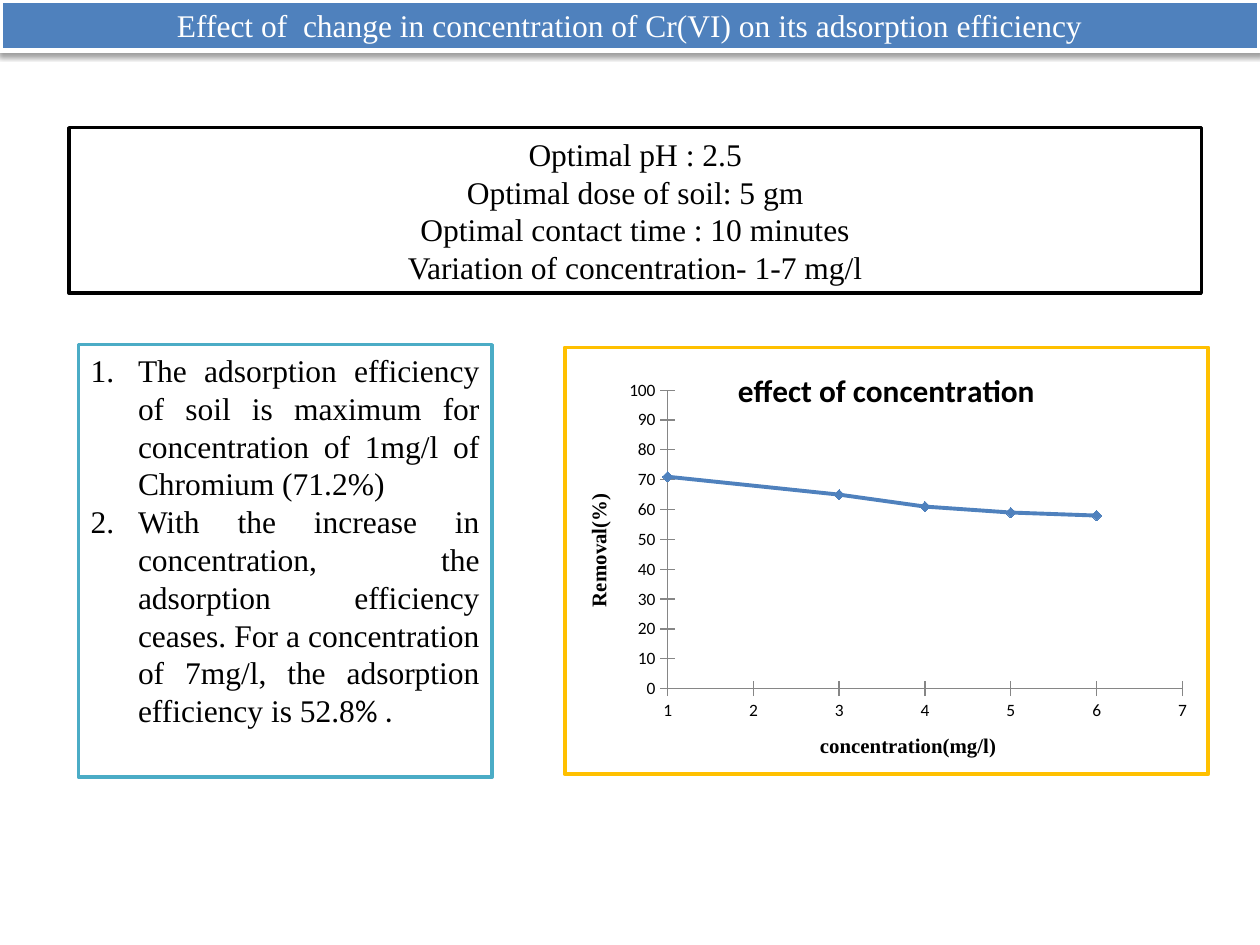
from lxml.etree import fromstring
from pptx import Presentation
from pptx.chart.data import XyChartData
from pptx.dml.color import RGBColor
from pptx.enum.chart import XL_CHART_TYPE, XL_MARKER_STYLE, XL_TICK_MARK
from pptx.enum.shapes import MSO_SHAPE
from pptx.enum.text import MSO_ANCHOR, PP_ALIGN
from pptx.util import Pt

COLORS = {"blue": "4F81BD", "white": "FFFFFF", "black": "000000",
          "teal": "4BACC6", "gold": "FFC000", "gray": "868686"}
SERIF, SANS = "Times New Roman", "Calibri"
NS = ('xmlns:a="http://schemas.openxmlformats.org/drawingml/2006/main" '
      'xmlns:c="http://schemas.openxmlformats.org/drawingml/2006/chart"')


def tint(name):
    return RGBColor.from_string(COLORS[name])


def apply(item, values):
    for key, value in values.items():
        setattr(item, key, value)


def style(font, color="black", **values):
    apply(font, values)
    font.color.rgb = tint(color)


def stroke(line, color, width):
    line.color.rgb = tint(color)
    line.width = Pt(width)


def add_box(slide, place, fill, edge, width, anchor=MSO_ANCHOR.MIDDLE):
    box = slide.shapes.add_shape(MSO_SHAPE.RECTANGLE, *map(Pt, place))
    box.shadow.inherit = False
    box.fill.solid()
    box.fill.fore_color.rgb = tint(fill)
    stroke(box.line, edge, width)
    apply(box.text_frame, {"word_wrap": True, "vertical_anchor": anchor})
    return box


def add_text(box, lines, align, color="black"):
    frame = box.text_frame
    for i, runs in enumerate(lines):
        para = frame.add_paragraph() if i else frame.paragraphs[0]
        para.alignment = align
        for text, face in runs:
            run = para.add_run()
            run.text = text
            style(run.font, color, name=face, size=Pt(18))


def add_shade(box):
    box._element.spPr.find("{*}effectLst").append(fromstring(
        f'<a:outerShdw {NS} blurRad="{Pt(3.1)}" dist="{Pt(1.6)}" dir="5400000" '
        f'rotWithShape="0"><a:srgbClr val="{COLORS["black"]}">'
        '<a:alpha val="38000"/></a:srgbClr></a:outerShdw>'))


def add_count(box):
    for para in box.text_frame.paragraphs:
        props = para._p.get_or_add_pPr()
        for key, value in {"marL": Pt(27), "indent": -Pt(27)}.items():
            props.set(key, str(value))
        props.append(fromstring(f'<a:buFont {NS} typeface="+mj-lt"/>'))
        props.append(fromstring(f'<a:buAutoNum {NS} type="arabicPeriod"/>'))


def set_title(owner, text, face, size):
    frame = (owner.chart_title if hasattr(owner, "chart_title")
             else owner.axis_title).text_frame
    frame.text = text
    style(frame.paragraphs[0].runs[0].font, name=face, size=Pt(size), bold=True)


def set_axis(axis, title, low, high, step):
    apply(axis, {"minimum_scale": low, "maximum_scale": high, "major_unit": step,
                 "has_major_gridlines": False,
                 "major_tick_mark": XL_TICK_MARK.CROSS,
                 "minor_tick_mark": XL_TICK_MARK.NONE})
    stroke(axis.format.line, "gray", 0.75)
    axis.tick_labels.number_format = "General"
    axis.tick_labels.number_format_is_linked = False
    set_title(axis, title, SERIF, 12)


def set_frame(chart):
    root = chart._chartSpace
    root.find("{*}chart").addnext(fromstring(
        f'<c:spPr {NS}><a:solidFill><a:srgbClr val="{COLORS["white"]}"/></a:solidFill>'
        f'<a:ln w="{Pt(2.25)}"><a:solidFill><a:srgbClr val="{COLORS["gold"]}"/>'
        '</a:solidFill></a:ln></c:spPr>'))
    plot = root.find(".//{*}plotArea")
    old = plot.find("{*}layout")
    if old is not None:
        plot.remove(old)
    sizes = {"x": 0.16, "y": 0.1, "w": 0.8, "h": 0.7}
    modes = "".join(f'<c:{key}Mode val="edge"/>' for key in "xy")
    parts = "".join(f'<c:{key} val="{value}"/>' for key, value in sizes.items())
    plot.insert(0, fromstring(
        f'<c:layout {NS}><c:manualLayout><c:layoutTarget val="inner"/>'
        f'{modes}{parts}</c:manualLayout></c:layout>'))


def add_graph(slide, place, points):
    data = XyChartData()
    rows = data.add_series("Series 1")
    for x, y in points:
        rows.add_data_point(x, y)
    chart = slide.shapes.add_chart(
        XL_CHART_TYPE.XY_SCATTER_LINES, *map(Pt, place), data).chart
    style(chart.font, name=SANS, size=Pt(10))
    chart.has_legend = False
    set_title(chart, "effect of concentration", SANS, 18)
    chart.chart_title.include_in_layout = True
    set_axis(chart.category_axis, "concentration(mg/l)", 1, 7, 1)
    set_axis(chart.value_axis, "Removal(%)", 0, 100, 10)
    plot = chart.plots[0]
    plot.vary_by_categories = False
    line = plot.series[0]
    line.smooth = False
    stroke(line.format.line, "blue", 2.25)
    apply(line.marker, {"style": XL_MARKER_STYLE.DIAMOND, "size": 6})
    line.marker.format.fill.solid()
    line.marker.format.fill.fore_color.rgb = tint("blue")
    stroke(line.marker.format.line, "blue", 0.75)
    set_frame(chart)


def main():
    deck = Presentation()
    apply(deck, {"slide_width": Pt(720), "slide_height": Pt(540)})
    slide = deck.slides.add_slide(deck.slide_layouts[6])

    head = add_box(slide, (0, 0, 720, 29), "blue", "white", 3)
    add_shade(head)
    add_text(head, [[("Effect of  change in concentration of Cr(VI) on its "
                      "adsorption efficiency", SERIF)]], PP_ALIGN.CENTER, "white")

    add_graph(slide, (321.5, 197.5, 370, 246),
              [(1, 71), (3, 65), (4, 61), (5, 59), (6, 58)])

    facts = ["Optimal pH : 2.5", "Optimal dose of soil: 5 gm",
             "Optimal contact time : 10 minutes",
             "Variation of concentration- 1-7 mg/l"]
    setup = add_box(slide, (39.5, 73, 647, 94.5), "white", "black", 2)
    add_text(setup, [[(fact, SERIF)] for fact in facts], PP_ALIGN.CENTER)

    notes = add_box(slide, (44.75, 197, 236.5, 247), "white", "teal", 2,
                    MSO_ANCHOR.TOP)
    add_text(notes, [
        [("The adsorption efficiency of soil is maximum for concentration "
          "of 1mg/l of Chromium (71.2%)", SERIF)],
        [("With the increase in concentration, the adsorption efficiency ceases. "
          "For a concentration of 7mg/l, the adsorption efficiency is 52.8", SERIF),
         ("% .", SANS)]], PP_ALIGN.JUSTIFY)
    add_count(notes)
    deck.save("out.pptx")


if __name__ == "__main__":
    main()
